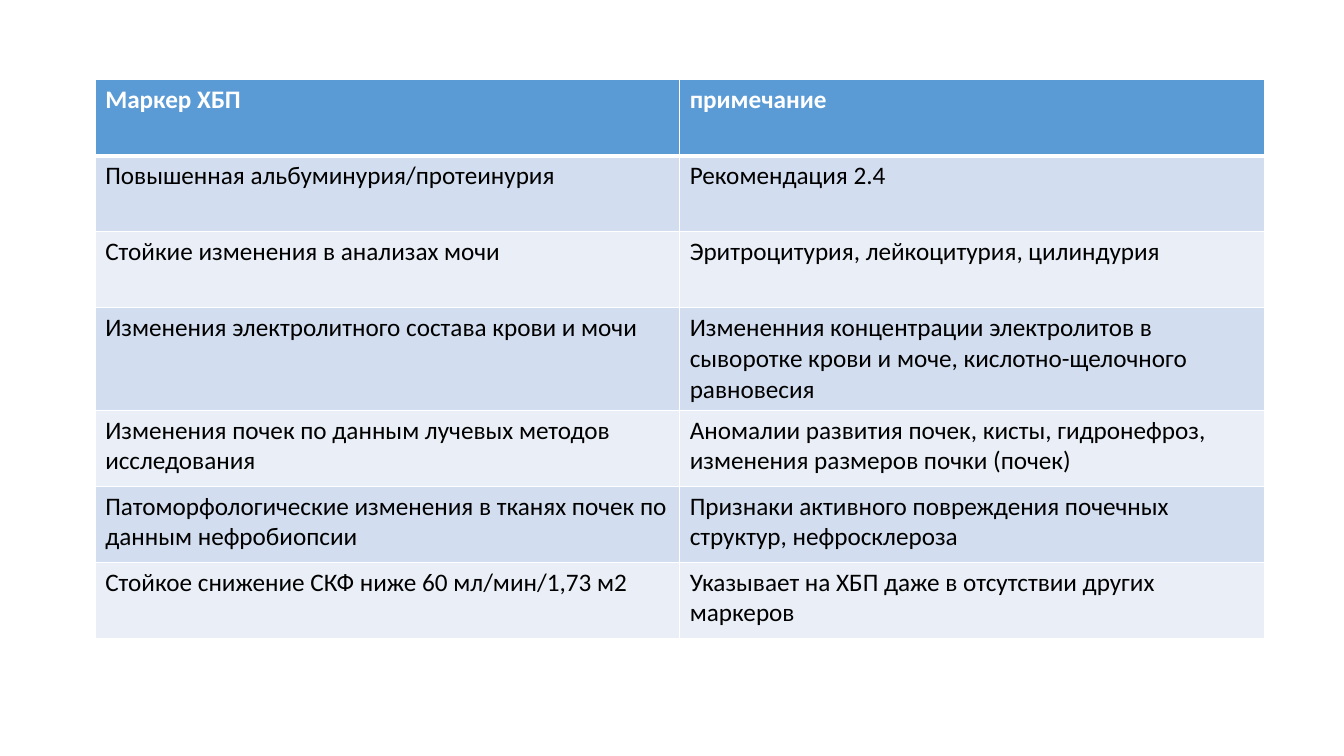
import pptx
import pptx.util
import pptx.dml.color
import pptx.oxml
import pptx.oxml.ns

Pt = pptx.util.Pt

COLOURS = {
    "white": "FFFFFF",
    "black": "000000",
    "header": "5B9BD5",
    "odd": "D2DEEF",
    "even": "EAEFF7",
}

MARKERS = [
    ("Маркер ХБП", "примечание"),
    ("Повышенная альбуминурия/протеинурия", "Рекомендация 2.4"),
    ("Стойкие изменения в анализах мочи", "Эритроцитурия, лейкоцитурия, цилиндурия"),
    ("Изменения электролитного состава крови и мочи",
     "Измененния концентрации электролитов в сыворотке крови и моче, кислотно-щелочного равновесия"),
    ("Изменения почек по данным лучевых методов исследования",
     "Аномалии развития почек, кисты, гидронефроз, изменения размеров почки (почек)"),
    ("Патоморфологические изменения в тканях почек по данным нефробиопсии",
     "Признаки активного повреждения почечных структур, нефросклероза"),
    ("Стойкое снижение СКФ ниже 60 мл/мин/1,73 м2",
     "Указывает на ХБП даже в отсутствии других маркеров"),
]


def rgb(name):
    return pptx.dml.color.RGBColor.from_string(COLOURS[name])


def write(para, text, font="Calibri", size=18, colour="black", bold=False):
    span = para.add_run()
    span.text = text
    span.font.name = font
    span.font.size = Pt(size)
    span.font.bold = bold
    span.font.color.rgb = rgb(colour)


class SlideBuilder:
    def __init__(self, deck):
        self.page = deck.slides.add_slide(deck.slide_layouts[6])

    def border(self, cell, side, width, colour="white"):
        properties = cell._tc.get_or_add_tcPr()
        properties.append(pptx.oxml.parse_xml(
            f'<a:ln{side} {pptx.oxml.ns.nsdecls("a")} w="{Pt(width)}">'
            f'<a:solidFill><a:srgbClr val="{COLOURS[colour]}"/></a:solidFill>'
            f'</a:ln{side}>'))

    def cell(self, cell, text, row):
        widths = {"L": 1, "R": 1, "T": 3 if row == 1 else 1, "B": 3 if row == 0 else 1}
        for side, width in widths.items():
            self.border(cell, side, width)
        cell.fill.solid()
        if row == 0:
            cell.fill.fore_color.rgb = rgb("header")
            write(cell.text_frame.paragraphs[0], text, colour="white", bold=True)
        else:
            cell.fill.fore_color.rgb = rgb("odd" if row % 2 else "even")
            write(cell.text_frame.paragraphs[0], text)

    def table(self, rows, left, top, column_width, row_height):
        columns = len(rows[0])
        table = self.page.shapes.add_table(
            len(rows), columns, Pt(left), Pt(top),
            Pt(column_width * columns), Pt(row_height * len(rows))).table
        for column in table.columns:
            column.width = Pt(column_width)
        for index, texts in enumerate(rows):
            table.rows[index].height = Pt(row_height)
            for position, text in enumerate(texts):
                self.cell(table.cell(index, position), text, index)


def main():
    deck = pptx.Presentation()
    deck.slide_width = Pt(960)
    deck.slide_height = Pt(540)
    SlideBuilder(deck).table(MARKERS, left=68, top=57, column_width=417.5, row_height=54.3)
    deck.save("out.pptx")


if __name__ == "__main__":
    main()
